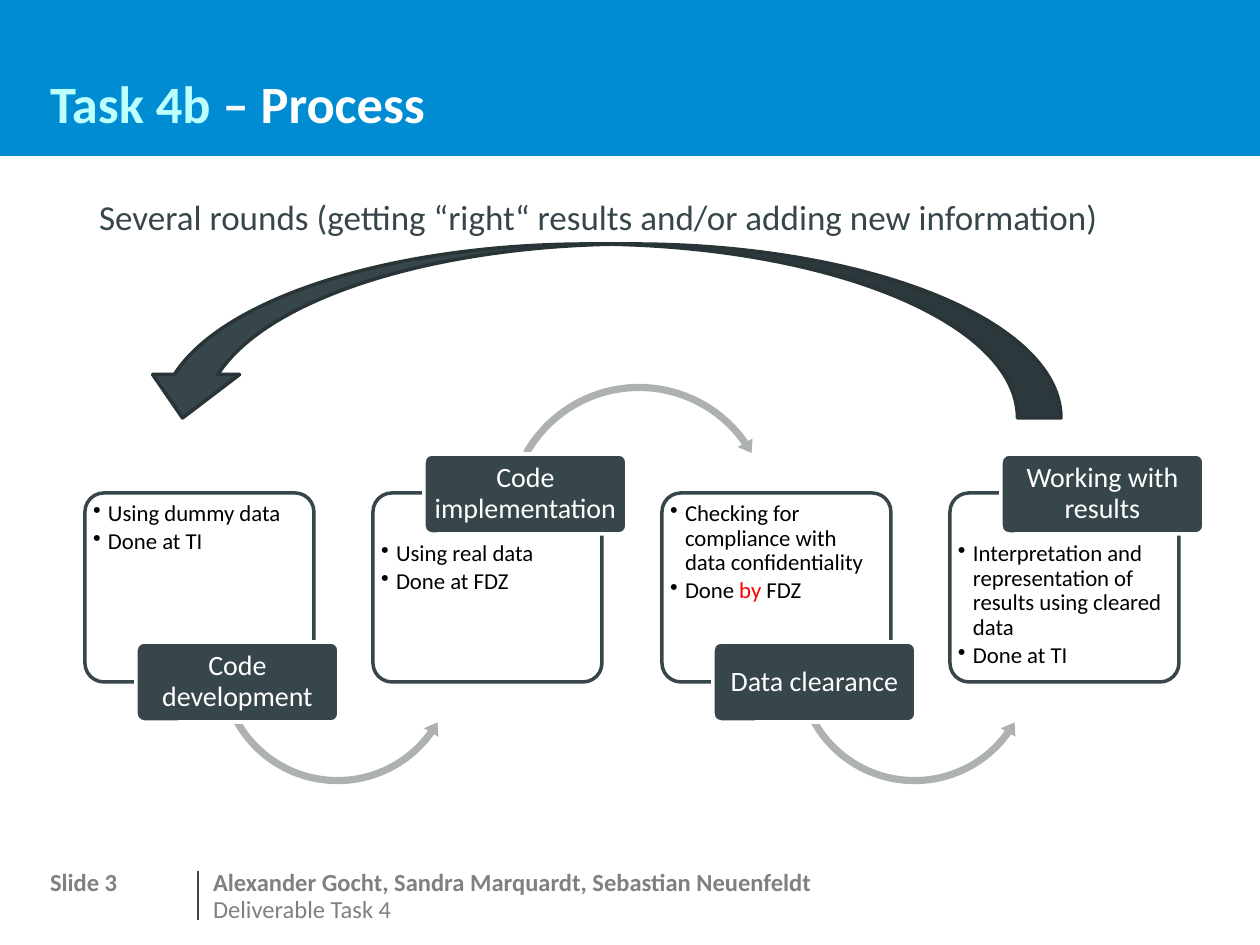
from lxml.etree import SubElement
from pptx import Presentation
from pptx.dml.color import RGBColor
from pptx.enum.shapes import MSO_CONNECTOR, MSO_SHAPE
from pptx.enum.text import MSO_ANCHOR, MSO_AUTO_SIZE, PP_ALIGN
from pptx.oxml.ns import qn
from pptx.util import Emu, Pt

COLORS = {
    "blue": "008CD2", "cyan": "BBFFFF", "white": "FFFFFF", "slate": "37464B",
    "edge": "293437", "arrow": "AEB1B2", "grey": "808080", "black": "000000",
    "red": "FF0000",
}
rgb = {name: RGBColor.from_string(value) for name, value in COLORS.items()}
PX = 914400 / 126  # EMU per px

prs = Presentation()
prs.slide_width, prs.slide_height = Emu(9144000), Emu(6858000)
s = prs.slides.add_slide(prs.slide_layouts[5])


def add_shape(kind, box, fill, line=None, adj=()):
    sp = s.shapes.add_shape(kind, *[Emu(round(v * PX)) for v in box])
    sp.shadow.inherit = False
    sp.fill.solid()
    sp.fill.fore_color.rgb = rgb[fill]
    if line:
        sp.line.color.rgb = rgb[line]
        sp.line.width = Pt(2)
    else:
        sp.line.fill.background()
    for i, value in enumerate(adj):
        sp.adjustments[i] = value
    return sp


def write(sp, paragraphs, size, bold=False, inset=(0, 0)):
    """Fill a shape with paragraphs, each a list of (text, colour) runs."""
    tf = sp.text_frame
    tf.word_wrap = True
    tf.auto_size = MSO_AUTO_SIZE.NONE
    tf.margin_left = tf.margin_right = Emu(round(inset[0] * PX))
    tf.margin_top = tf.margin_bottom = Emu(round(inset[1] * PX))
    for i, runs in enumerate(paragraphs):
        p = tf.add_paragraph() if i else tf.paragraphs[0]
        for text, color in runs:
            r = p.add_run()
            r.text = text
            r.font.name, r.font.size, r.font.bold = "Calibri", Pt(size), bold
            r.font.color.rgb = rgb[color]
    return tf


# Header band, behind the title
band = add_shape(MSO_SHAPE.RECTANGLE, (0, -2, 1260, 158), "blue")
s.shapes._spTree.insert(2, band._element)

title = s.shapes.title
title.left, title.top, title.width, title.height = [
    Emu(round(v * PX)) for v in (50, 0, 1160, 134)]
tf = write(title, [[("Task 4b ", "cyan"), ("– Process", "white")]], 30, True)
tf.vertical_anchor = MSO_ANCHOR.BOTTOM
tf.paragraphs[0].alignment = PP_ALIGN.LEFT
tf.paragraphs[0].line_spacing = Pt(35)

# Footer and heading above the return arrow
for text, box, size, color, bold in [
    ("Slide 3", (50, 867, 134, 25), 14, "grey", True),
    ("Alexander Gocht, Sandra Marquardt, Sebastian Neuenfeldt",
     (213, 867, 835, 38), 14, "grey", True),
    ("Deliverable Task 4", (213, 894, 835, 38), 14, "grey", False),
    ("Several rounds (getting “right“ results and/or adding new information)",
     (99, 195, 1150, 43), 20, "slate", False),
]:
    tb = s.shapes.add_textbox(*[Emu(round(v * PX)) for v in box])
    tf = write(tb, [[(text, color)]], size, bold)
tf.paragraphs[0].line_spacing = Pt(24)

rule = s.shapes.add_connector(
    MSO_CONNECTOR.STRAIGHT, *[Emu(round(v * PX)) for v in (198, 871, 198, 920)])
rule.line.color.rgb = rgb["slate"]
rule.line.width = Pt(0.75)
SubElement(rule._element.spPr, qn("a:effectLst"))

# Process steps: labels alternate between the lower and the upper edge
steps = [
    ("Code development",
     [[("Using dummy data", "black")], [("Done at TI", "black")]]),
    ("Code implementation",
     [[("Using real data", "black")], [("Done at FDZ", "black")]]),
    ("Data clearance",
     [[("Checking for compliance with data confidentiality", "black")],
      [("Done ", "black"), ("by ", "red"), ("FDZ", "black")]]),
    ("Working with results",
     [[("Interpretation and representation of results using cleared data",
        "black")], [("Done at TI", "black")]]),
]
for i, (label, bullets) in enumerate(steps):
    x = 85 + i * 577 // 2
    upper = i % 2 == 1
    add_shape(MSO_SHAPE.ROUNDED_RECTANGLE, (x, 493, 229, 189),
              "white", "slate", [0.1])

    tb = s.shapes.add_textbox(*[
        Emu(round(v * PX)) for v in (x + 4, 538 if upper else 498, 219, 140)])
    tf = write(tb, bullets, 13, inset=(4, 4))
    for p in tf.paragraphs:
        pPr = p._p.get_or_add_pPr()
        pPr.set("marL", str(round(15 * PX)))
        pPr.set("indent", str(round(-15 * PX)))
        SubElement(pPr, qn("a:buChar"), char="•")
        p.line_spacing = 0.9
        p.space_after = Pt(2)

    # Arrow to the next step
    if upper and i < len(steps) - 1:
        add_shape(MSO_SHAPE.CIRCULAR_ARROW, (x + 128, 379, 276, 276), "arrow",
                  adj=[0.026, 3.205, 195.04, 125.755, 0.031])
    elif not upper:
        add_shape(MSO_SHAPE.LEFT_CIRCULAR_ARROW, (x + 129, 542, 247, 247),
                  "arrow", adj=[0.029, 3.61, 21.365, 90.245, 0.034])

    tag = add_shape(MSO_SHAPE.ROUNDED_RECTANGLE,
                    (x + 51, 454 if upper else 642, 203, 80),
                    "slate", "white", [0.1])
    tf = write(tag, [[(label, "white")]], 16, inset=(4, 3))
    tf.vertical_anchor = MSO_ANCHOR.MIDDLE
    tf.paragraphs[0].alignment = PP_ALIGN.CENTER
    tf.paragraphs[0].line_spacing = 0.9

# Return arrow from the last step to the first
back = add_shape(MSO_SHAPE.CURVED_UP_ARROW, (139, 244, 922, 174),
                 "slate", "edge")
back.rotation = 180

prs.save("out.pptx")
